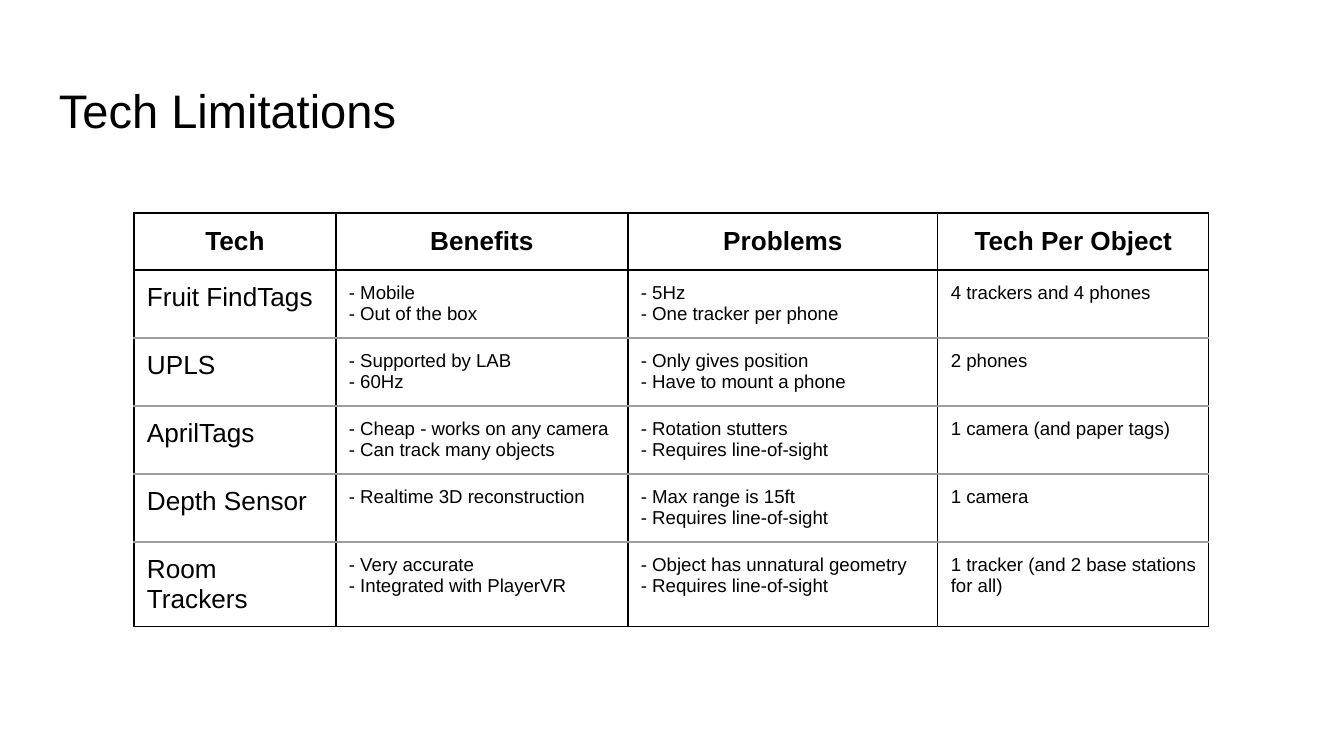
"""Builds the Tech Limitations slide, a table comparing tracking technologies."""
from lxml.etree import SubElement
from pptx import Presentation
from pptx.dml.color import RGBColor
from pptx.enum.text import MSO_ANCHOR as ANCHOR, PP_ALIGN as ALIGN
from pptx.oxml.ns import qn
from pptx.util import Pt

EMU_PER_PX = 914400 / 134.4
BLACK = RGBColor(0x00, 0x00, 0x00)
GRAY = RGBColor(0x9E, 0x9E, 0x9E)
WHITE = RGBColor(0xFF, 0xFF, 0xFF)

COLUMNS = [202, 292, 310, 271]
HEADER_HEIGHT, ROW_HEIGHT = 57, 68
HEADERS = ["Tech", "Benefits", "Problems", "Tech Per Object"]
ROWS = [
    ["Fruit FindTags",
     ["- Mobile", "- Out of the box"],
     ["- 5Hz", "- One tracker per phone"],
     ["4 trackers and 4 phones"]],
    ["UPLS",
     ["- Supported by LAB", "- 60Hz"],
     ["- Only gives position", "- Have to mount a phone"],
     ["2 phones"]],
    ["AprilTags",
     ["- Cheap - works on any camera", "- Can track many objects"],
     ["- Rotation stutters", "- Requires line-of-sight"],
     ["1 camera (and paper tags)"]],
    ["Depth Sensor",
     ["- Realtime 3D reconstruction"],
     ["- Max range is 15ft", "- Requires line-of-sight"],
     ["1 camera"]],
    ["Room Trackers",
     ["- Very accurate", "- Integrated with PlayerVR"],
     ["- Object has unnatural geometry", "- Requires line-of-sight"],
     ["1 tracker (and 2 base stations for all)"]],
]


def px(n):
    return round(n * EMU_PER_PX)


class Deck:
    """Holds the style and the current slide."""

    def __init__(self, width, height, font="Arial", color=BLACK, inset=13):
        self.prs = Presentation()
        self.prs.slide_width, self.prs.slide_height = px(width), px(height)
        self.font, self.color, self.inset = font, color, inset

    def slide(self):
        self.s = self.prs.slides.add_slide(self.prs.slide_layouts[5])
        self.s.background.fill.solid()
        self.s.background.fill.fore_color.rgb = WHITE

    def text(self, tf, lines, size, bold=False, align=ALIGN.LEFT):
        for i, line in enumerate(lines):
            p = tf.add_paragraph() if i else tf.paragraphs[0]
            p.alignment = align
            r = p.add_run()
            r.text = line
            r.font.name, r.font.size, r.font.bold = self.font, Pt(size), bold
            r.font.color.rgb = self.color

    def margins(self, box):
        box.margin_left = box.margin_right = px(self.inset)
        box.margin_top = box.margin_bottom = px(self.inset)

    def title(self, x, y, w, h, line, size):
        sp = self.s.shapes.title
        sp.left, sp.top, sp.width, sp.height = px(x), px(y), px(w), px(h)
        tf = sp.text_frame
        tf.word_wrap, tf.vertical_anchor = True, ANCHOR.BOTTOM
        self.margins(tf)
        self.text(tf, [line], size)

    def borders(self, cell, top, bottom):
        tc_pr = cell._tc.get_or_add_tcPr()
        sides = {"lnL": BLACK, "lnR": BLACK, "lnT": top, "lnB": bottom}
        for side, color in sides.items():
            ln = SubElement(tc_pr, qn(f"a:{side}"), w=str(Pt(0.75)))
            fill = SubElement(ln, qn("a:solidFill"))
            SubElement(fill, qn("a:srgbClr"), val=str(color))

    def cell(self, cell, lines, size, top, bottom, header=False):
        self.margins(cell)
        cell.vertical_anchor = ANCHOR.MIDDLE if header else ANCHOR.TOP
        self.borders(cell, top, bottom)
        cell.fill.background()
        align = ALIGN.CENTER if header else ALIGN.LEFT
        self.text(cell.text_frame, lines, size, header, align)

    def table(self, x, y, columns, headers, rows):
        heights = [HEADER_HEIGHT] + [ROW_HEIGHT] * len(rows)
        table = self.s.shapes.add_table(
            len(heights), len(columns), px(x), px(y),
            px(sum(columns)), px(sum(heights))).table
        table.first_row = table.horz_banding = False
        for column, width in zip(table.columns, columns):
            column.width = px(width)
        for row, height in zip(table.rows, heights):
            row.height = px(height)
        for c, header in enumerate(headers):
            self.cell(table.cell(0, c), [header], 14, BLACK, BLACK, header=True)
        for r, (name, *details) in enumerate(rows, 1):
            top = BLACK if r == 1 else GRAY
            bottom = BLACK if r == len(rows) else GRAY
            self.cell(table.cell(r, 0), [name], 14, top, bottom)
            for c, lines in enumerate(details, 1):
                self.cell(table.cell(r, c), lines, 10, top, bottom)


def main():
    deck = Deck(1344, 756)
    deck.slide()
    deck.table(134, 213, COLUMNS, HEADERS, ROWS)
    deck.title(46, 66, 1252, 85, "Tech Limitations", 25.2)
    deck.prs.save("out.pptx")


if __name__ == "__main__":
    main()
